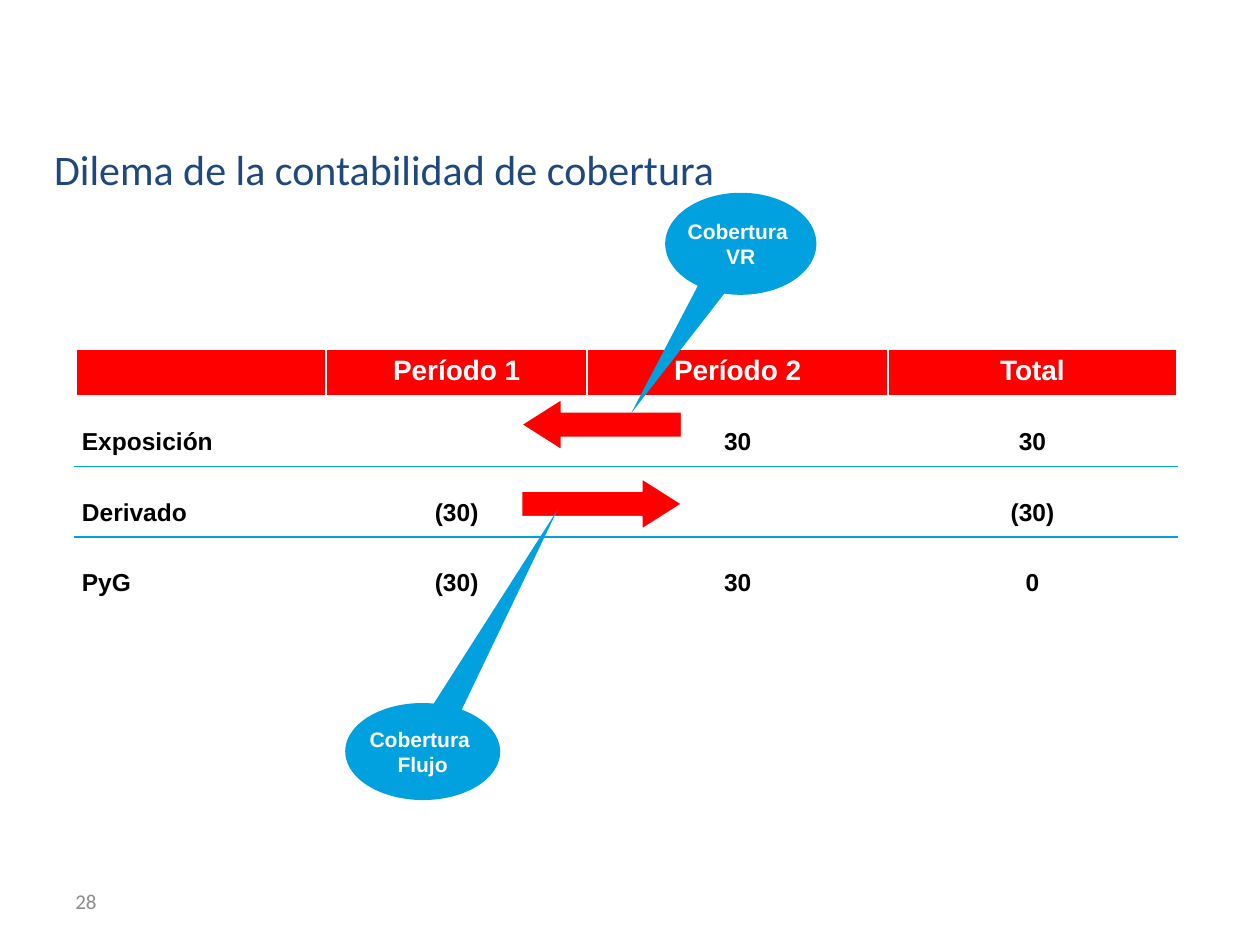
import pptx
import pptx.util
import pptx.dml.color
import pptx.enum.shapes
import pptx.enum.text
import pptx.oxml.ns
from lxml import etree

Inches = pptx.util.Inches
Pt = pptx.util.Pt
SHAPE = pptx.enum.shapes.MSO_SHAPE
ALIGN = pptx.enum.text.PP_ALIGN
MIDDLE = pptx.enum.text.MSO_ANCHOR.MIDDLE

COLORS = {"title": "1F497D", "red": "FF0000", "blue": "00A1DE",
          "white": "FFFFFF", "black": "000000", "gray": "8C8C8C"}

TITLE = "Dilema de la contabilidad de cobertura"
PAGE_NUMBER = "28"
ROWS = [
    ["", "Período 1", "Período 2", "Total"],
    ["Exposición", "", "30", "30"],
    ["Derivado", "(30)", "", "(30)"],
    ["PyG", "(30)", "30", "0"],
]
COLUMN_WIDTHS = [1.99, 2.07, 2.39, 2.29]
ROW_HEIGHTS = [0.37, 0.56, 0.56, 0.56]
TABLE_LEFT, TABLE_TOP = 0.6, 2.77

ARROWS = [(SHAPE.LEFT_ARROW, 3.17), (SHAPE.RIGHT_ARROW, 3.8)]
CALLOUTS = [
    ("Cobertura \nVR", (5.28, 1.53, 1.2, 0.81), (-0.726, 1.662), 0),
    ("Cobertura \nFlujo", (2.74, 5.58, 1.23, 0.77), (0.866, -2.501), 0.2),
]


def rgb(name):
    return pptx.dml.color.RGBColor.from_string(COLORS[name])


def format_runs(text_frame, size, font_name, color, bold=False):
    for paragraph in text_frame.paragraphs:
        for run in paragraph.runs:
            run.font.size = Pt(size)
            run.font.name = font_name
            run.font.bold = bold
            run.font.color.rgb = rgb(color)


def add_border(cell, side, color, width):
    qn = pptx.oxml.ns.qn
    properties = cell._tc.get_or_add_tcPr()
    line = etree.SubElement(properties, qn(f"a:ln{side}"), w=str(Pt(width)))
    fill = etree.SubElement(line, qn("a:solidFill"))
    etree.SubElement(fill, qn("a:srgbClr"), val=COLORS[color])


def fill_cell(cell, text, row, column):
    header = row == 0
    size = 16 if header else 14
    cell.margin_left = cell.margin_right = Inches(0.05)
    cell.margin_top = cell.margin_bottom = Inches(0.05)
    for side in "LR":
        add_border(cell, side, "white", 1.5)
    for side, inner in (("T", row > 1), ("B", 0 < row < len(ROWS) - 1)):
        add_border(cell, side, *(("blue", 1) if inner else ("white", 1.5)))
    cell.fill.solid()
    cell.fill.fore_color.rgb = rgb("red" if header else "white")
    paragraph = cell.text_frame.paragraphs[0]
    paragraph.text = text
    paragraph.alignment = ALIGN.CENTER if column else ALIGN.LEFT
    if not header:
        paragraph.line_spacing = 1.95
    format_runs(cell.text_frame, size, "Arial", "white" if header else "black", True)
    if not text:
        etree.SubElement(paragraph._p, pptx.oxml.ns.qn("a:endParaRPr"), sz=str(size * 100))


def add_table(slide):
    table = slide.shapes.add_table(
        len(ROWS), len(COLUMN_WIDTHS), Inches(TABLE_LEFT), Inches(TABLE_TOP),
        Inches(sum(COLUMN_WIDTHS)), Inches(sum(ROW_HEIGHTS))).table
    table.first_row = table.horz_banding = False
    for column, width in zip(table.columns, COLUMN_WIDTHS):
        column.width = Inches(width)
    for row, height in zip(table.rows, ROW_HEIGHTS):
        row.height = Inches(height)
    for row, texts in enumerate(ROWS):
        for column, text in enumerate(texts):
            fill_cell(table.cell(row, column), text, row, column)


def add_filled_shape(slide, kind, box, color, adjustments):
    shape = slide.shapes.add_shape(kind, *map(Inches, box))
    shape.shadow.inherit = False
    shape.fill.solid()
    shape.fill.fore_color.rgb = rgb(color)
    for index, value in enumerate(adjustments):
        shape.adjustments[index] = value
    return shape


def add_arrow(slide, kind, top):
    arrow = add_filled_shape(slide, kind, (4.14, top, 1.27, 0.4), "red", (0.5, 0.789))
    arrow.line.color.rgb = rgb("white")
    arrow.line.width = Pt(0.75)


def add_callout(slide, text, box, tip, rotation):
    callout = add_filled_shape(slide, SHAPE.OVAL_CALLOUT, box, "blue", tip)
    callout.rotation = rotation
    callout.line.fill.background()
    text_frame = callout.text_frame
    text_frame.text = text
    text_frame.word_wrap = False
    text_frame.vertical_anchor = MIDDLE
    for paragraph in text_frame.paragraphs:
        paragraph.alignment = ALIGN.CENTER
    format_runs(text_frame, 12, "Arial", "white", True)


def main():
    presentation = pptx.Presentation()
    presentation.slide_width = Inches(10)
    presentation.slide_height = Inches(7.5)
    slide = presentation.slides.add_slide(presentation.slide_layouts[5])

    title = slide.shapes.title
    title.left, title.top, title.width, title.height = map(Inches, (0.33, 1.09, 9, 0.5))
    title.text_frame.text = TITLE
    title.text_frame.vertical_anchor = MIDDLE
    title.text_frame.paragraphs[0].alignment = ALIGN.LEFT
    format_runs(title.text_frame, 24, "Calibri", "title")

    add_table(slide)
    for kind, top in ARROWS:
        add_arrow(slide, kind, top)
    for callout in CALLOUTS:
        add_callout(slide, *callout)

    number = slide.shapes.add_textbox(*map(Inches, (0.5, 6.95, 2.33, 0.4)))
    number.text_frame.text = PAGE_NUMBER
    number.text_frame.word_wrap = True
    number.text_frame.vertical_anchor = MIDDLE
    format_runs(number.text_frame, 12, "Calibri", "gray")

    presentation.save("out.pptx")


if __name__ == "__main__":
    main()
